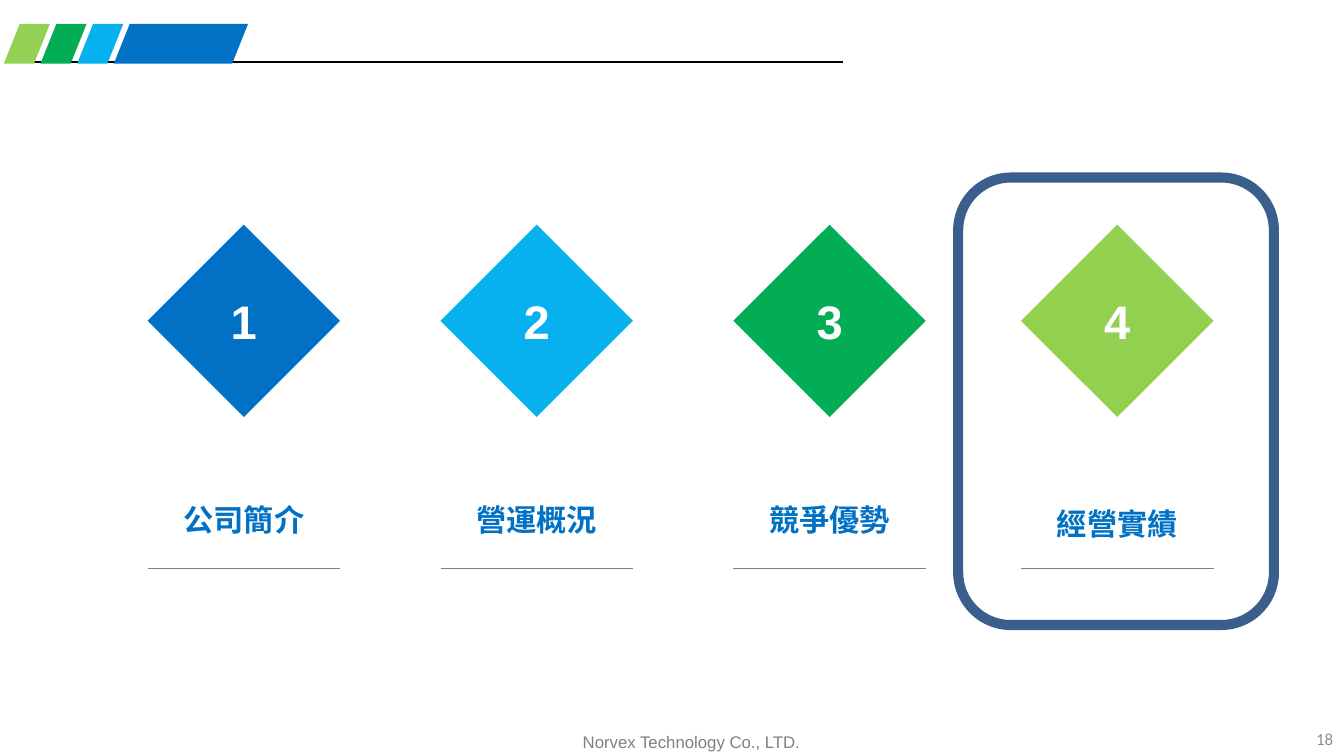
from dataclasses import dataclass

from lxml import etree
from pptx import Presentation
from pptx.dml.color import RGBColor
from pptx.enum.shapes import MSO_CONNECTOR, MSO_SHAPE
from pptx.enum.text import MSO_ANCHOR, PP_ALIGN
from pptx.oxml.ns import qn
from pptx.util import Cm, Pt

DIAMOND = MSO_SHAPE.DIAMOND
SLANT = MSO_SHAPE.PARALLELOGRAM
ROUND = MSO_SHAPE.ROUNDED_RECTANGLE
STRAIGHT = MSO_CONNECTOR.STRAIGHT
CENTER, RIGHT = PP_ALIGN.CENTER, PP_ALIGN.RIGHT
TOP, MIDDLE = MSO_ANCHOR.TOP, MSO_ANCHOR.MIDDLE


@dataclass(frozen=True)
class Theme:
    """Colours, fonts and type sizes of the slide."""
    blue: str = "0071C5"
    sky: str = "06B1EE"
    green: str = "03AD55"
    lime: str = "93D154"
    leaf: str = "92D050"
    navy: str = "3A5F8C"
    black: str = "000000"
    white: str = "FFFFFF"
    gray: str = "808080"
    pale: str = "8C8C8C"
    latin: str = "Arial"
    page: str = "Calibri"
    han: str = "Noto Sans CJK SC"
    small: int = 10
    label: int = 18
    number: int = 28


class Deck:
    """Draws styled elements on the current slide."""

    def __init__(self, theme, slide):
        """Keep the theme and the slide."""
        self.theme = theme
        self.slide = slide

    def fill_text(self, frame, text, size, color, font, align=CENTER, anchor=MIDDLE, bold=False):
        """Put one formatted paragraph in a text frame."""
        frame.text = text
        frame.vertical_anchor = anchor
        para = frame.paragraphs[0]
        para.alignment = align
        run = para.runs[0]
        run.font.size = Pt(size)
        run.font.bold = bold
        run.font.name = font
        run.font.color.rgb = RGBColor.from_string(color)
        east = etree.SubElement(run.font._element, qn("a:ea"))
        east.set("typeface", font)
        return para

    def text(self, box, text, size, color, font, wrap=True, **style):
        """Add a text box and return its paragraph."""
        frame = self.slide.shapes.add_textbox(*map(Cm, box)).text_frame
        frame.word_wrap = wrap
        return self.fill_text(frame, text, size, color, font, **style)

    def shape(self, kind, box, fill):
        """Add a filled shape without outline."""
        shape = self.slide.shapes.add_shape(kind, *map(Cm, box))
        shape.shadow.inherit = False
        shape.fill.solid()
        shape.fill.fore_color.rgb = RGBColor.from_string(fill)
        shape.line.fill.background()
        return shape

    def frame(self, box, color, width):
        """Add a rounded outline without fill."""
        shape = self.shape(ROUND, box, color)
        shape.fill.background()
        shape.line.color.rgb = RGBColor.from_string(color)
        shape.line.width = Pt(width)

    def rule(self, left, top, width, color):
        """Add a thin level line."""
        line = self.slide.shapes.add_connector(
            STRAIGHT, Cm(left), Cm(top), Cm(left + width), Cm(top))
        line.line.color.rgb = RGBColor.from_string(color)
        line.line.width = Pt(0.75)
        etree.SubElement(line._element.spPr, qn("a:effectLst"))

    def band(self, left, width, fill):
        """Add a slanted header band."""
        shape = self.shape(SLANT, (left, 0.5, width, 0.84), fill)
        shape.adjustments[0] = 0.4

    def topic(self, left, top, number, name, fill):
        """Add a numbered diamond with its label and rule."""
        theme, side = self.theme, 4.04
        gem = self.shape(DIAMOND, (left, 4.72, side, side), fill)
        self.fill_text(gem.text_frame, str(number), theme.number, theme.white,
                       theme.latin, bold=True)
        self.rule(left, 11.94, side, theme.gray)
        wide = 3.07
        para = self.text((left + (side - wide) / 2, top, wide, 1.27), name,
                         theme.label, theme.blue, theme.han, wrap=False,
                         anchor=TOP, bold=True)
        para.line_spacing = 1.5


def main():
    """Build and save the agenda slide."""
    theme = Theme()
    show = Presentation()
    show.slide_width, show.slide_height = Cm(28.22), Cm(15.88)
    deck = Deck(theme, show.slides.add_slide(show.slide_layouts[6]))

    deck.text((10.39, 15.24, 8.25, 0.71), "Norvex Technology Co., LTD.",
              theme.small, theme.gray, theme.latin, anchor=TOP)
    deck.rule(0.18, 1.3, 17.52, theme.black)
    bands = [(theme.lime, 0.97), (theme.green, 0.97), (theme.sky, 0.97), (theme.blue, 2.82)]
    for step, (fill, width) in enumerate(bands):
        deck.band(0.08 + 0.77 * step, width, fill)
    deck.text((27, 15.14, 1.24, 0.74), "18", theme.small, theme.pale,
              theme.page, align=RIGHT)

    deck.frame((20.12, 3.73, 6.63, 9.4), theme.navy, 6)
    topics = [
        (3.1, 10.03, "公司簡介", theme.blue),
        (9.25, 10.03, "營運概況", theme.sky),
        (15.4, 10.03, "競爭優勢", theme.green),
        (21.44, 10.1, "經營實績", theme.leaf),
    ]
    for number, (left, top, name, fill) in enumerate(topics, 1):
        deck.topic(left, top, number, name, fill)

    show.save("out.pptx")


if __name__ == "__main__":
    main()
